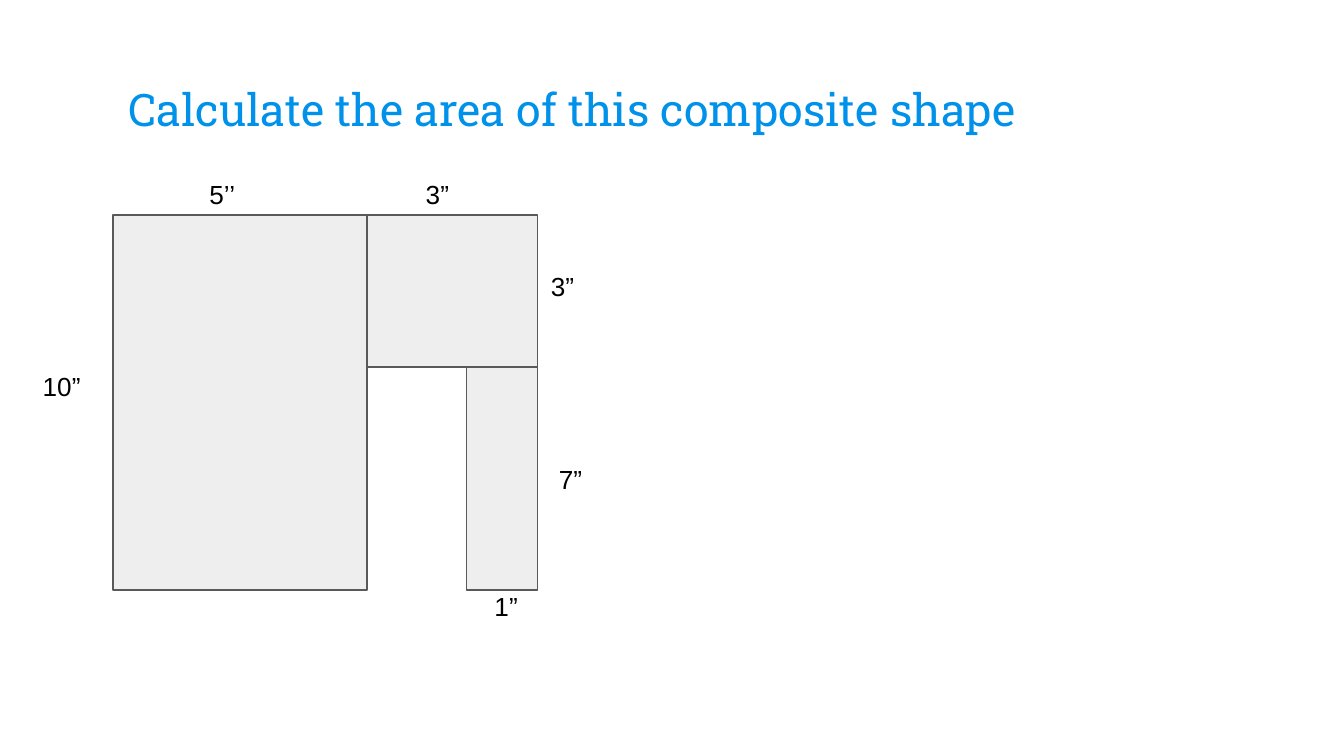
from dataclasses import dataclass

from pptx import Presentation
from pptx.dml.color import RGBColor
from pptx.enum.shapes import MSO_SHAPE
from pptx.enum.text import MSO_ANCHOR
from pptx.util import Pt


@dataclass(frozen=True)
class Theme:
    heading_font: str = "Roboto Slab"
    body_font: str = "Arial"
    heading_size: float = 24
    label_size: float = 14
    heading_color: RGBColor = RGBColor(0x00, 0x91, 0xEA)
    label_color: RGBColor = RGBColor(0x00, 0x00, 0x00)
    area_fill: RGBColor = RGBColor(0xEE, 0xEE, 0xEE)
    area_line: RGBColor = RGBColor(0x59, 0x59, 0x59)
    line_width: float = 0.75
    inset: float = 7.2


class SlideBuilder:
    def __init__(self, slide, theme):
        self.slide = slide
        self.theme = theme

    def text(self, words, box, font, size, color, anchor):
        frame = self.slide.shapes.add_textbox(*map(Pt, box)).text_frame
        frame.word_wrap = True
        frame.vertical_anchor = anchor
        frame.margin_left = frame.margin_right = Pt(self.theme.inset)
        frame.margin_top = frame.margin_bottom = Pt(self.theme.inset)
        frame.text = words
        run_font = frame.paragraphs[0].runs[0].font
        run_font.name = font
        run_font.size = Pt(size)
        run_font.color.rgb = color

    def heading(self, words, box):
        theme = self.theme
        self.text(words, box, theme.heading_font, theme.heading_size,
                  theme.heading_color, MSO_ANCHOR.BOTTOM)

    def dimension(self, words, left, top, width=75.6, height=31):
        theme = self.theme
        self.text(words, (left, top, width, height), theme.body_font,
                  theme.label_size, theme.label_color, MSO_ANCHOR.TOP)

    def area(self, left, top, right, bottom):
        rectangle = self.slide.shapes.add_shape(
            MSO_SHAPE.RECTANGLE,
            *map(Pt, (left, top, right - left, bottom - top)))
        rectangle.shadow.inherit = False
        rectangle.fill.solid()
        rectangle.fill.fore_color.rgb = self.theme.area_fill
        rectangle.line.color.rgb = self.theme.area_line
        rectangle.line.width = Pt(self.theme.line_width)


def main():
    deck = Presentation()
    deck.slide_width, deck.slide_height = Pt(720), Pt(405)
    builder = SlideBuilder(deck.slides.add_slide(deck.slide_layouts[6]), Theme())

    # Heading
    builder.heading("Calculate the area of this composite shape",
                    (61.9, 24.5, 596.2, 55.4))

    # Composite shape: three rectangles with shared edges
    left, inner, leg, right = 60.5, 196.6, 249.8, 288
    top, middle, bottom = 115.2, 196.6, 316.1
    builder.area(left, top, inner, bottom)
    builder.area(inner, top, right, middle)
    builder.area(leg, middle, right, bottom)

    # Dimensions
    above = 88.6
    builder.dimension("5’’", 105.1, above)
    builder.dimension("3”", 221, above)
    builder.dimension("10”", 15.8, 191.5)
    builder.dimension("3”", right, 137.5)
    builder.dimension("7”", 292.3, 241.2)
    builder.dimension("1”", 257.8, 308.9, width=35.3, height=28.1)

    deck.save("out.pptx")


if __name__ == "__main__":
    main()
